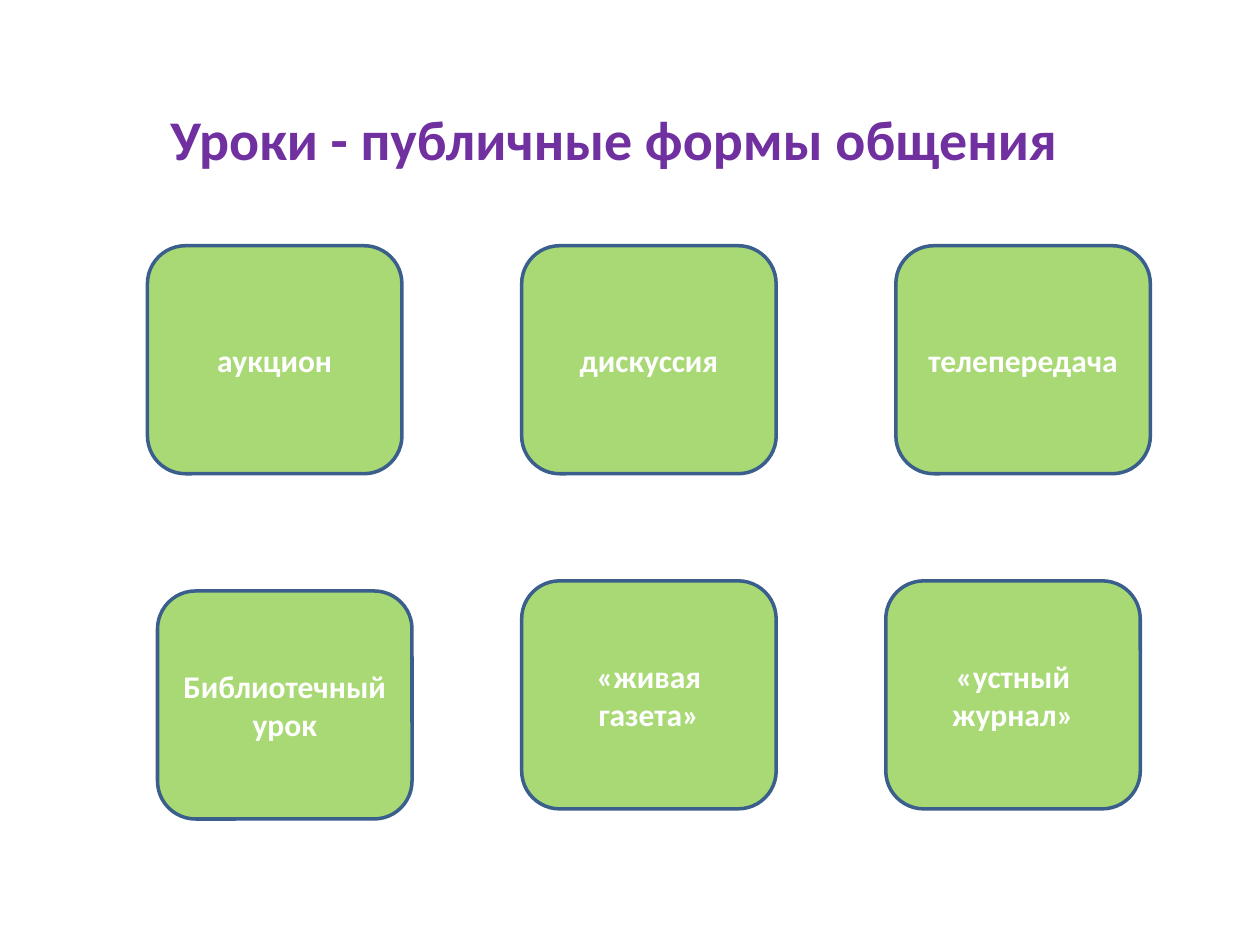
from dataclasses import dataclass

from lxml import etree
from pptx import Presentation
from pptx.dml.color import RGBColor
from pptx.enum import shapes, text
from pptx.oxml import ns
from pptx.util import Inches, Pt

GREEN = RGBColor(0x92, 0xD0, 0x50)
BLUE = RGBColor(0x3A, 0x5F, 0x8C)
PURPLE = RGBColor(0x70, 0x30, 0xA0)
WHITE = RGBColor(0xFF, 0xFF, 0xFF)
FONT = "Calibri"
CARD_W, CARD_H = 2.02, 1.81
CARD_OPACITY = 79
TOP_ROW, BOTTOM_ROW = 1.95, 4.61


@dataclass
class Card:
    label: str
    left: float
    top: float


CARDS = [
    Card("аукцион", 1.17, TOP_ROW),
    Card("Библиотечный урок", 1.25, BOTTOM_ROW + 0.08),
    Card("«живая газета»", 4.14, BOTTOM_ROW),
    Card("«устный журнал»", 7.03, BOTTOM_ROW),
    Card("телепередача", 7.11, TOP_ROW),
    Card("дискуссия", 4.14, TOP_ROW),
]


def write(tf, content: str, size: int, color: RGBColor) -> None:
    """Set one bold, centred paragraph."""
    p = tf.paragraphs[0]
    p.text = content
    p.alignment = text.PP_ALIGN.CENTER
    p.font.name = FONT
    p.font.size = Pt(size)
    p.font.bold = True
    p.font.color.rgb = color


def add_card(s, card: Card) -> None:
    sp = s.shapes.add_shape(
        shapes.MSO_SHAPE.ROUNDED_RECTANGLE,
        Inches(card.left), Inches(card.top), Inches(CARD_W), Inches(CARD_H))
    sp.shadow.inherit = False
    sp.fill.solid()
    sp.fill.fore_color.rgb = GREEN
    fill_color = sp.fill._xPr.find(ns.qn("a:solidFill"))[0]
    alpha = etree.SubElement(fill_color, ns.qn("a:alpha"))
    alpha.set("val", str(CARD_OPACITY * 1000))
    sp.line.color.rgb = BLUE
    sp.line.width = Pt(2)
    tf = sp.text_frame
    tf.word_wrap = True
    tf.vertical_anchor = text.MSO_ANCHOR.MIDDLE
    write(tf, card.label, 18, WHITE)


def add_title(s, content: str) -> None:
    sp = s.shapes.add_textbox(Inches(1.22), Inches(0.78), Inches(7.31), Inches(0.64))
    tf = sp.text_frame
    tf.word_wrap = False
    tf.auto_size = text.MSO_AUTO_SIZE.SHAPE_TO_FIT_TEXT
    write(tf, content, 32, PURPLE)


def main() -> None:
    prs = Presentation()
    prs.slide_width, prs.slide_height = Inches(10), Inches(7.5)
    s = prs.slides.add_slide(prs.slide_layouts[6])

    # Lesson forms
    for card in CARDS:
        add_card(s, card)

    # Heading
    add_title(s, "Уроки - публичные формы общения")

    prs.save("out.pptx")


if __name__ == "__main__":
    main()
